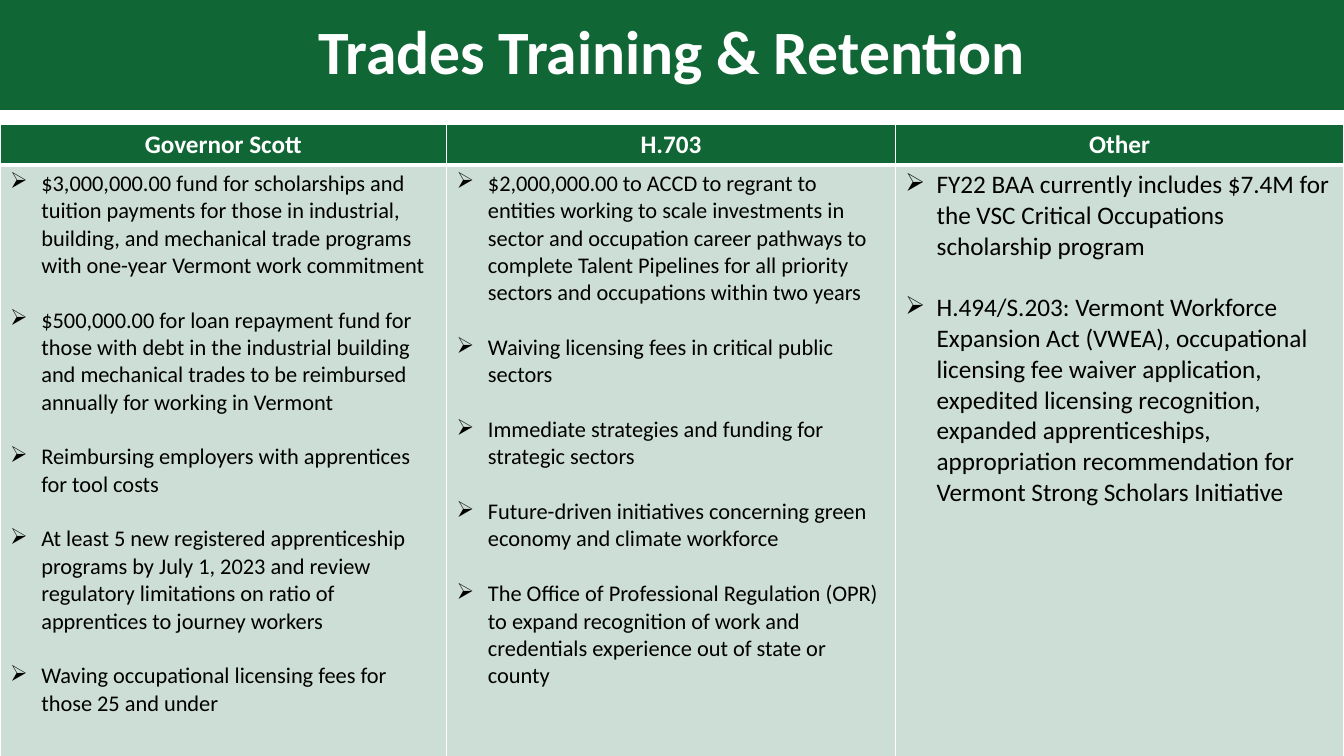
from dataclasses import dataclass

from lxml import etree
from pptx import Presentation
from pptx import util as u
from pptx.dml.color import RGBColor
from pptx.enum import shapes, text
from pptx.oxml import ns

SCALE = 9144
GREEN = RGBColor(0x10, 0x66, 0x35)
PALE = RGBColor(0xCD, 0xDE, 0xD6)
WHITE = RGBColor(0xFF, 0xFF, 0xFF)
BLACK = RGBColor(0, 0, 0)
FONT = "Calibri"
WIDE, HIGH = 1333, 750
INDENT = 31


@dataclass(frozen=True)
class Column:
    head: str
    width: int
    size: int
    gap: float
    items: tuple[str, ...]


COLUMNS = (
    Column("Governor Scott", 443, 16, 19.5, (
        "$3,000,000.00 fund for scholarships and tuition payments for those in industrial, "
        "building, and mechanical trade programs with one-year Vermont work commitment",
        "$500,000.00 for loan repayment fund for those with debt in the industrial building "
        "and mechanical trades to be reimbursed annually for working in Vermont",
        "Reimbursing employers with apprentices for tool costs",
        "At least 5 new registered apprenticeship programs by July 1, 2023 and review "
        "regulatory limitations on ratio of apprentices to journey workers",
        "Waving occupational licensing fees for those 25 and under",
    )),
    Column("H.703", 445, 16, 19.5, (
        "$2,000,000.00 to ACCD to regrant to entities working to scale investments in sector "
        "and occupation career pathways to complete Talent Pipelines for all priority sectors "
        "and occupations within two years",
        "Waiving licensing fees in critical public sectors",
        "Immediate strategies and funding for strategic sectors",
        "Future-driven initiatives concerning green economy and climate workforce",
        "The Office of Professional Regulation (OPR) to expand recognition of work and "
        "credentials experience out of state or county",
    )),
    Column("Other", 445, 18, 22, (
        "FY22 BAA currently includes $7.4M for the VSC Critical Occupations scholarship program",
        "H.494/S.203: Vermont Workforce Expansion Act (VWEA), occupational licensing fee waiver "
        "application, expedited licensing recognition, expanded apprenticeships, appropriation "
        "recommendation for Vermont Strong Scholars Initiative",
    )),
)


def px(n: int) -> u.Emu:
    return u.Emu(n * SCALE)


def style(para, size: int, color: RGBColor, bold: bool) -> None:
    for run in para.runs:
        font = run.font
        font.name, font.size, font.bold = FONT, u.Pt(size), bold
        font.color.rgb = color


def center(para, words: str, size: int) -> None:
    para.text = words
    para.alignment = text.PP_ALIGN.CENTER
    style(para, size, WHITE, True)


def bullet(para, words: str, col: Column) -> None:
    para.text = words
    props = para._p.get_or_add_pPr()
    props.set("marL", str(px(INDENT)))
    props.set("indent", str(px(-INDENT)))
    etree.SubElement(props, ns.qn("a:buChar")).set("char", "➢")
    style(para, col.size, BLACK, False)


def border(cell, top: int, base: int) -> None:
    props = cell._tc.get_or_add_tcPr()
    for side, points in (("L", 1), ("R", 1), ("T", top), ("B", base)):
        line = etree.SubElement(props, ns.qn(f"a:ln{side}"), w=str(u.Pt(points)))
        fill = etree.SubElement(line, ns.qn("a:solidFill"))
        etree.SubElement(fill, ns.qn("a:srgbClr"), val=str(WHITE))


def paint(cell, color: RGBColor) -> None:
    cell.fill.solid()
    cell.fill.fore_color.rgb = color


def title(slide) -> None:
    bar = slide.shapes.add_shape(shapes.MSO_SHAPE.RECTANGLE, 0, 0, px(WIDE), px(109))
    bar.shadow.inherit = False
    paint(bar, GREEN)
    bar.line.fill.background()
    frame = bar.text_frame
    frame.word_wrap = True
    frame.vertical_anchor = text.MSO_ANCHOR.MIDDLE
    para = frame.paragraphs[0]
    center(para, "Trades Training & Retention", 44)
    para.line_spacing = 0.9


def table(slide) -> None:
    grid = slide.shapes.add_table(2, len(COLUMNS), 0, px(123), px(WIDE), px(627)).table
    grid.horz_banding = False
    for row, height in zip(grid.rows, (39, 588)):
        row.height = px(height)
    for index, col in enumerate(COLUMNS):
        grid.columns[index].width = px(col.width)
        head, body = grid.cell(0, index), grid.cell(1, index)
        border(head, 1, 3)
        paint(head, GREEN)
        center(head.text_frame.paragraphs[0], col.head, 18)
        border(body, 3, 1)
        paint(body, PALE)
        frame = body.text_frame
        for place, words in enumerate(col.items):
            para = frame.add_paragraph() if place else frame.paragraphs[0]
            bullet(para, words, col)
            if place:
                para.space_before = u.Pt(col.gap)


def main() -> None:
    deck = Presentation()
    deck.slide_width, deck.slide_height = px(WIDE), px(HIGH)
    slide = deck.slides.add_slide(deck.slide_layouts[6])
    title(slide)
    table(slide)
    deck.save("out.pptx")


if __name__ == "__main__":
    main()
